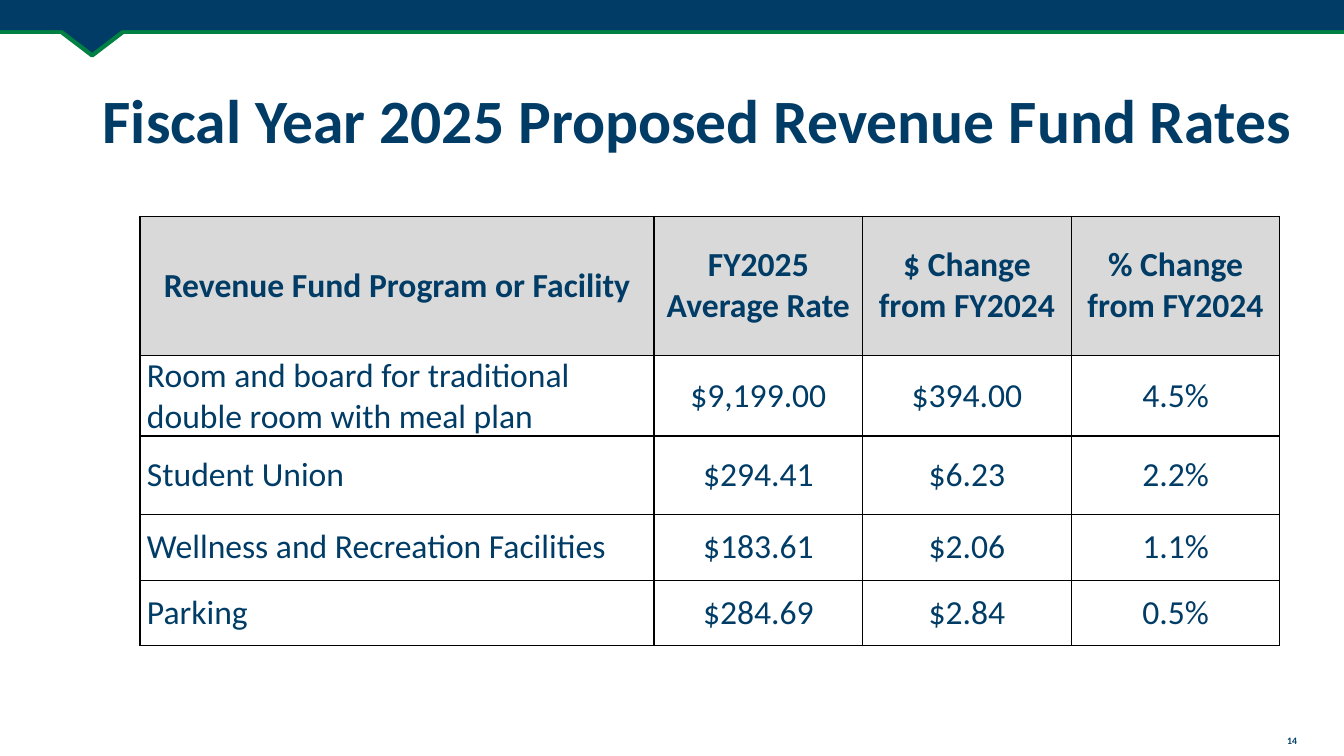
"""Builds the slide of proposed revenue fund rates for fiscal year 2025."""
from lxml.etree import SubElement as Sub
from pptx import Presentation
from pptx.dml.color import RGBColor as Rgb
from pptx.enum.shapes import MSO_CONNECTOR as Conn, MSO_SHAPE as Kind
from pptx.enum.text import MSO_ANCHOR as Anchor, MSO_AUTO_SIZE as Auto, PP_ALIGN as Align
from pptx.oxml.ns import qn
from pptx.util import Pt

HUES = {"navy": "003C66", "green": "008042", "head": "D9D9D9", "rule": "000000"}
WIDTHS = [367.2, 149, 149, 149]
HEIGHTS = [99.4, 42.5, 56.2, 46.8, 46.8]
ROWS = [
    ["Revenue Fund Program or Facility", "FY2025 Average Rate",
     "$ Change from FY2024", "% Change from FY2024"],
    ["Room and board for traditional double room with meal plan",
     "$9,199.00", "$394.00", "4.5%"],
    ["Student Union", "$294.41", "$6.23", "2.2%"],
    ["Wellness and Recreation Facilities", "$183.61", "$2.06", "1.1%"],
    ["Parking", "$284.69", "$2.84", "0.5%"],
]


def hue(name):
    return Rgb.from_string(HUES[name])


def write(frame, text, size=24, bold=False, align=Align.CENTER, space=1.0):
    frame.word_wrap = True
    para = frame.paragraphs[0]
    para.text = text
    para.alignment = align
    para.line_spacing = space
    font = para.runs[0].font
    font.name, font.size, font.bold = "Calibri", Pt(size), bold
    font.color.rgb = hue("navy")


def place(shape, left, top, width, height):
    shape.left, shape.top = Pt(left), Pt(top)
    shape.width, shape.height = Pt(width), Pt(height)


def add_block(slide, kind, box, edge=None):
    shape = slide.shapes.add_shape(kind, *map(Pt, box))
    shape.shadow.inherit = False
    shape.fill.solid()
    shape.fill.fore_color.rgb = hue("navy")
    if edge:
        shape.line.color.rgb = hue(edge)
        shape.line.width = Pt(3)
    else:
        shape.line.fill.background()
    return shape


def add_band(slide):
    line = slide.shapes.add_connector(Conn.STRAIGHT, 0, Pt(23), Pt(960), Pt(23))
    line.line.color.rgb = hue("green")
    line.line.width = Pt(3)
    Sub(line._element.spPr, qn("a:effectLst"))
    notch = add_block(slide, Kind.ISOSCELES_TRIANGLE, (28, 10.8, 75.6, 28.8), "green")
    notch.rotation = 180
    add_block(slide, Kind.RECTANGLE, (0, 0, 960, 21.6))


def add_title(slide, text):
    title = slide.shapes.title
    place(title, 66.2, 36, 865.4, 104.4)
    frame = title.text_frame
    frame.auto_size = Auto.NONE
    frame.vertical_anchor = Anchor.MIDDLE
    write(frame, text, size=44, bold=True, align=Align.LEFT, space=0.9)


def add_number(slide, text):
    box = slide.shapes.add_textbox(Pt(905), Pt(521.3), Pt(36), Pt(15.8))
    write(box.text_frame, text, size=7, bold=True)


def frame_cell(cell):
    props = cell._tc.get_or_add_tcPr()
    for at, side in enumerate(("lnL", "lnR", "lnT", "lnB")):
        edge = props.makeelement(qn(f"a:{side}"), {"w": str(Pt(1))})
        fill = Sub(edge, qn("a:solidFill"))
        Sub(fill, qn("a:srgbClr"), val=HUES["rule"])
        props.insert(at, edge)


def fill_cell(cell, text, head, first):
    cell.margin_left = cell.margin_right = Pt(5)
    cell.margin_top = cell.margin_bottom = 0
    cell.vertical_anchor = Anchor.MIDDLE
    if head:
        cell.fill.solid()
        cell.fill.fore_color.rgb = hue("head")
    else:
        cell.fill.background()
    align = Align.LEFT if first and not head else Align.CENTER
    write(cell.text_frame, text, bold=head, align=align)
    frame_cell(cell)


def add_rates(slide):
    shape = slide.shapes.add_table(len(ROWS), len(WIDTHS), Pt(100), Pt(154.4),
                                   Pt(sum(WIDTHS)), Pt(sum(HEIGHTS)))
    table = shape.table
    table.horz_banding = False
    for col, width in zip(table.columns, WIDTHS):
        col.width = Pt(width)
    for row, height, texts in zip(table.rows, HEIGHTS, ROWS):
        row.height = Pt(height)
        for at, (cell, text) in enumerate(zip(row.cells, texts)):
            fill_cell(cell, text, head=texts is ROWS[0], first=at == 0)


def main():
    deck = Presentation()
    deck.slide_width, deck.slide_height = Pt(960), Pt(540)
    slide = deck.slides.add_slide(deck.slide_layouts[5])
    add_band(slide)
    add_number(slide, "14")
    add_title(slide, "Fiscal Year 2025 Proposed Revenue Fund Rates")
    add_rates(slide)
    deck.save("out.pptx")


if __name__ == "__main__":
    main()
